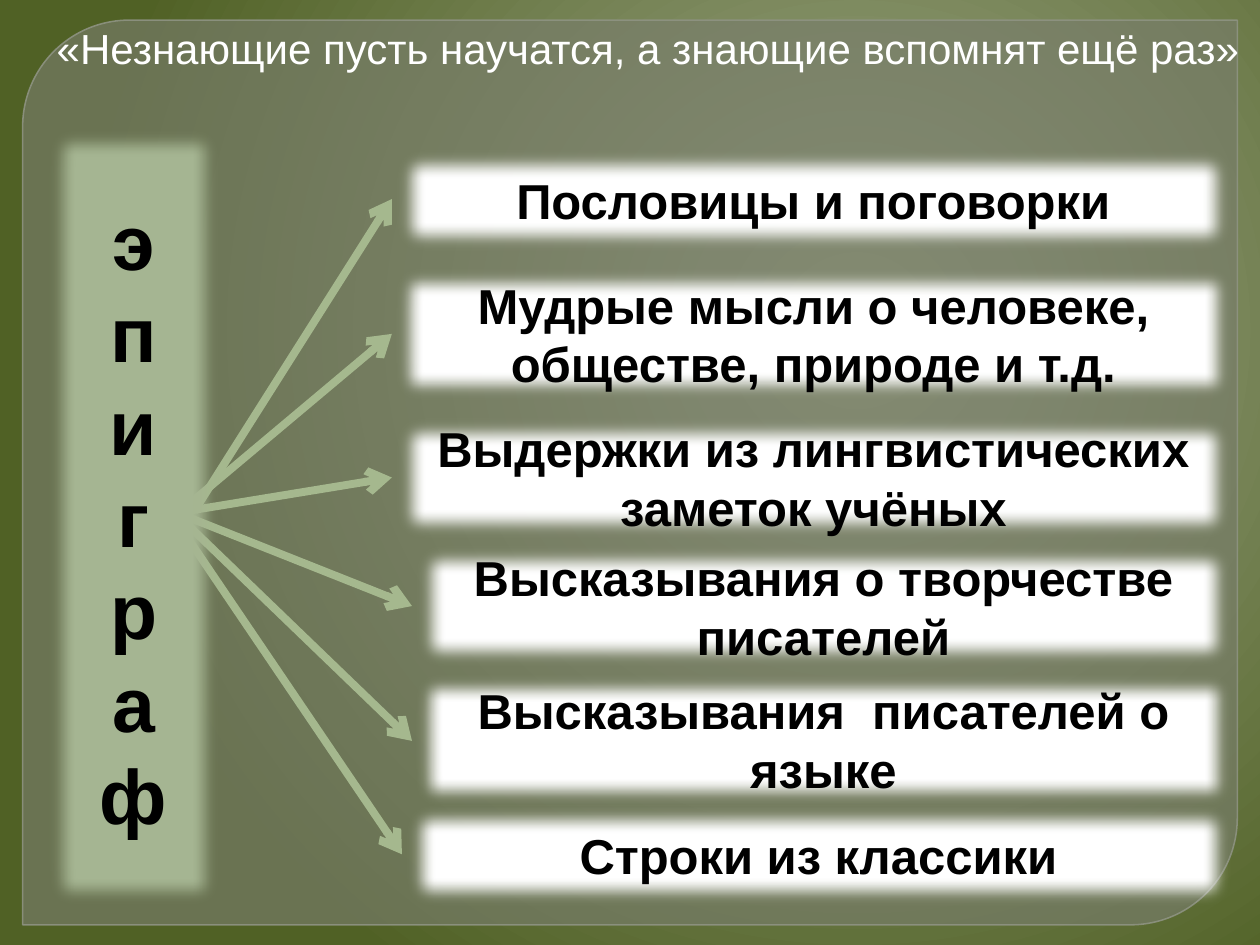
from lxml import etree
from pptx import Presentation
from pptx.dml.color import RGBColor
from pptx.enum import shapes, text
from pptx.oxml import parse_xml
from pptx.oxml.ns import nsdecls, qn
from pptx.util import Inches, Pt

TITLE = "«Незнающие пусть научатся, а знающие вспомнят ещё раз»"
KEYWORD = "эпиграф"
# text, left, top, height of the box, arrow start, arrow end
SOURCES = [
    ("Пословицы и поговорки", 3.11, 1.15, 0.87, (1.54, 4.06), (3.11, 1.58)),
    ("Мудрые мысли о человеке, обществе, природе и т.д.",
     3.11, 2.1, 1.1, (1.3, 4.17), (3.11, 2.65)),
    ("Выдержки из лингвистических заметок учёных",
     3.11, 3.28, 1.02, (1.46, 4.06), (3.11, 3.79)),
    ("Высказывания о творчестве писателей",
     3.27, 4.3, 1.02, (1.38, 4.06), (3.27, 4.81)),
    ("Высказывания  писателей о языке",
     3.27, 5.32, 1.1, (1.38, 4.06), (3.27, 5.88)),
    ("Строки из классики", 3.19, 6.35, 0.87, (1.3, 3.99), (3.19, 6.78)),
]
BOX_RIGHT = 9.8
BACKGROUND = [(0, "99A481"), (20, "8E9974"), (100, "506125")]


def rgb(code):
    return RGBColor.from_string(code)


def set_background(page):
    """Radial gradient, centred right of the middle."""
    page.background.fill.solid()
    stops = "".join(
        f'<a:gs pos="{pos * 1000}"><a:srgbClr val="{code}"/></a:gs>'
        for pos, code in BACKGROUND)
    gradient = parse_xml(
        f'<a:gradFill {nsdecls("a")} rotWithShape="1"><a:gsLst>{stops}</a:gsLst>'
        '<a:path path="circle"><a:fillToRect l="68000" t="35000" r="32000" b="65000"/>'
        '</a:path></a:gradFill>')
    solid = page._element.find(".//" + qn("p:bgPr")).find(qn("a:solidFill"))
    solid.getparent().replace(solid, gradient)


def set_alpha(color_format, percent):
    color = color_format._xFill.find(qn("a:srgbClr"))
    etree.SubElement(color, qn("a:alpha"), val=str(percent * 1000))


def add_filled(page, kind, area, fill, line, width):
    shape = page.shapes.add_shape(kind, *(Inches(v) for v in area))
    shape.shadow.inherit = False
    shape.fill.solid()
    shape.fill.fore_color.rgb = rgb(fill)
    shape.line.color.rgb = rgb(line)
    shape.line.width = Pt(width)
    return shape


def write(shape, words, size, color, bold, align):
    para = shape.text_frame.paragraphs[0]
    para.text = words
    para.alignment = align
    font = para.runs[0].font
    font.name, font.size, font.bold = "Arial", Pt(size), bold
    font.color.rgb = rgb(color)


def add_soft_box(page, area, fill, words, size):
    """Rectangle with blurred edges and centred bold text."""
    box = add_filled(page, shapes.MSO_SHAPE.RECTANGLE, area, fill, "7A866C", 2)
    effects = box._element.spPr.find(qn("a:effectLst"))
    etree.SubElement(effects, qn("a:softEdge"), rad=str(Pt(10)))
    box.text_frame.word_wrap = True
    box.text_frame.vertical_anchor = text.MSO_ANCHOR.MIDDLE
    write(box, words, size, "000000", True, text.PP_ALIGN.CENTER)
    return box


def add_arrow(page, start, end):
    arrow = page.shapes.add_connector(
        shapes.MSO_CONNECTOR.STRAIGHT, *(Inches(v) for v in start + end))
    arrow.line.color.rgb = rgb("A5B88E")
    arrow.line.width = Pt(4.5)
    etree.SubElement(arrow.line._get_or_add_ln(), qn("a:tailEnd"), type="arrow")
    etree.SubElement(arrow._element.spPr, qn("a:effectLst"))


def place_title(page):
    title = page.shapes.title
    title.left, title.top = Inches(0.35), Inches(0.13)
    title.width, title.height = Inches(9.65), Inches(0.5)
    frame = title.text_frame
    frame.word_wrap = True
    frame.auto_size = text.MSO_AUTO_SIZE.NONE
    frame.vertical_anchor = text.MSO_ANCHOR.TOP
    write(title, TITLE, 24, "FFFFFF", False, text.PP_ALIGN.LEFT)
    page.shapes._spTree.append(title._element)  # in front of the panel


def main():
    deck = Presentation()
    deck.slide_width, deck.slide_height = Inches(10), Inches(7.5)
    page = deck.slides.add_slide(deck.slide_layouts[5])
    set_background(page)

    panel = add_filled(page, shapes.MSO_SHAPE.ROUND_2_DIAG_RECTANGLE,
                       (0.18, 0.16, 9.64, 7.18), "787D6B", "8F9483", 0.87)
    panel.adjustments[0], panel.adjustments[1] = 0.118, 0
    set_alpha(panel.fill.fore_color, 65)
    set_alpha(panel.line.color, 88)

    for words, left, top, height, start, end in SOURCES:
        add_soft_box(page, (left, top, BOX_RIGHT - left, height), "FFFFFF", words, 28)
        add_arrow(page, start, end)

    column = add_soft_box(page, (0.35, 0.99, 1.42, 6.22), "A5B592", KEYWORD, 44)
    column.text_frame._txBody.bodyPr.set("vert", "wordArtVert")
    place_title(page)
    deck.save("out.pptx")


if __name__ == "__main__":
    main()
